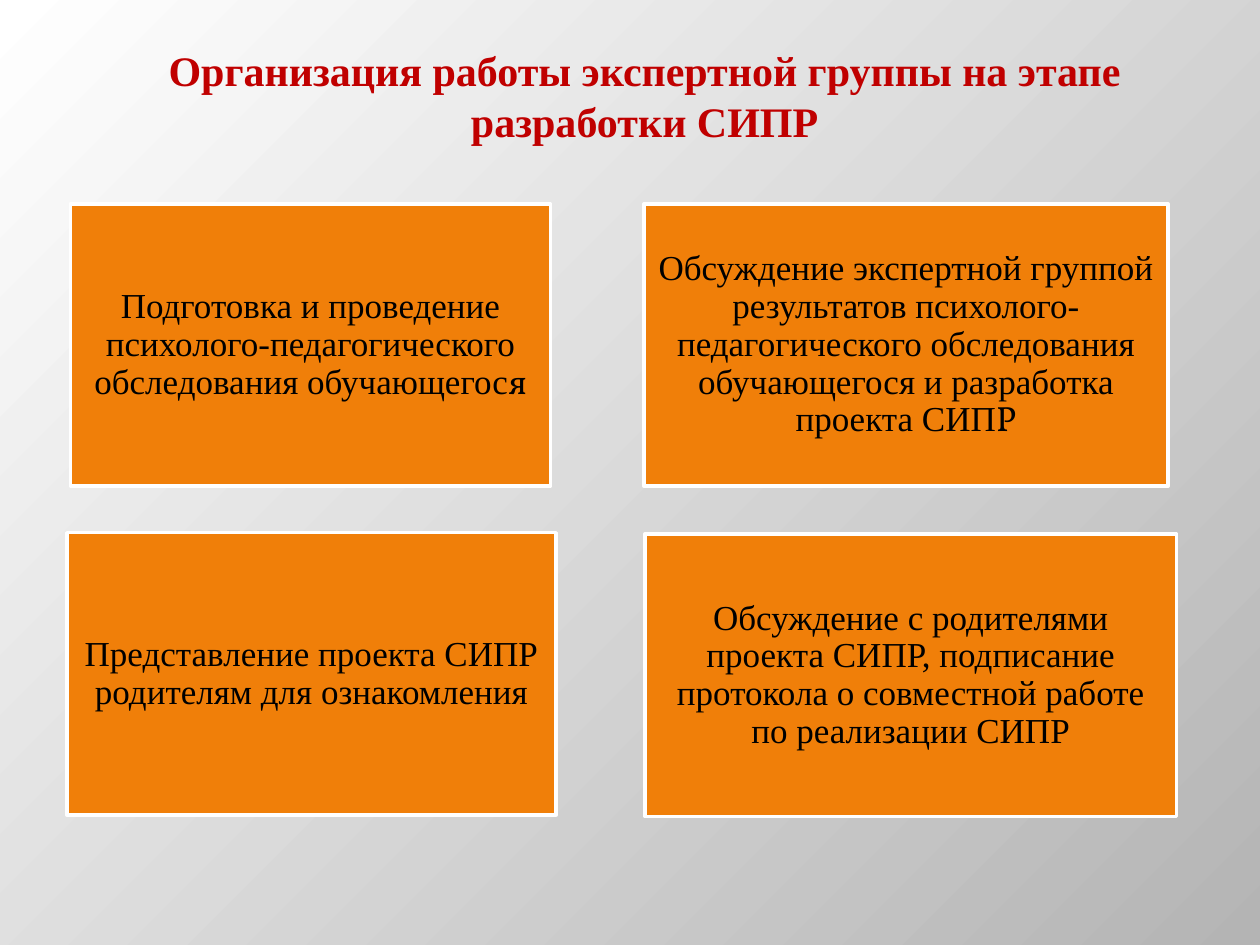
from pptx import Presentation
from pptx.dml.color import RGBColor as RGB
from pptx.enum.shapes import MSO_SHAPE as Shape
from pptx.enum.text import MSO_ANCHOR as Anchor, MSO_AUTO_SIZE as Auto, PP_ALIGN as Align
from pptx.util import Cm, Pt

WHITE = RGB(0xFF, 0xFF, 0xFF)
GRAY = RGB(0xB4, 0xB4, 0xB4)
RED = RGB(0xC0, 0x00, 0x00)
ORANGE = RGB(0xF0, 0x7F, 0x09)
BLACK = RGB(0x00, 0x00, 0x00)

SERIF = "Times New Roman"
TAIL = "Vollkorn"
HIGH = 5.69

# Left, top, width in cm; main text, last letter in the second font
STEPS = [
    (1.42, 4.11, 9.68,
     "Подготовка и проведение психолого-педагогического обследования обучающегос", "я"),
    (12.98, 4.11, 10.57,
     "Обсуждение экспертной группой результатов психолого-педагогического "
     "обследования обучающегося и разработка проекта СИП", "Р"),
    (1.35, 10.74, 9.86,
     "Представление проекта СИПР родителям для ознакомления", ""),
    (13.0, 10.77, 10.72,
     "Обсуждение с родителями проекта СИПР, подписание протокола "
     "о совместной работе по реализации СИПР", ""),
]


def write(para, text, font=SERIF, size=20, color=BLACK, bold=False):
    para.alignment = Align.CENTER
    run = para.add_run()
    run.text = text
    run.font.name = font
    run.font.size = Pt(size)
    run.font.bold = bold
    run.font.color.rgb = color


class Deck:
    def __init__(self):
        self.prs = Presentation()
        self.prs.slide_width, self.prs.slide_height = Cm(25.4), Cm(19.05)
        self.slide = self.prs.slides.add_slide(self.prs.slide_layouts[5])

    def back(self, start, end):
        fill = self.slide.background.fill
        fill.gradient()
        fill.gradient_angle = 315
        for stop, color in zip(fill.gradient_stops, (start, end)):
            stop.color.rgb = color

    def title(self, text, left, top, width, height):
        head = self.slide.shapes.title
        head.left, head.top = Cm(left), Cm(top)
        head.width, head.height = Cm(width), Cm(height)
        frame = head.text_frame
        frame.auto_size = Auto.NONE
        frame.vertical_anchor = Anchor.MIDDLE
        write(frame.paragraphs[0], text, size=24, color=RED, bold=True)

    def box(self, left, top, width, text, tail):
        box = self.slide.shapes.add_shape(
            Shape.RECTANGLE, Cm(left), Cm(top), Cm(width), Cm(HIGH))
        box.shadow.inherit = False
        box.fill.solid()
        box.fill.fore_color.rgb = ORANGE
        box.line.color.rgb = WHITE
        box.line.width = Pt(2)
        frame = box.text_frame
        frame.word_wrap = True
        frame.vertical_anchor = Anchor.MIDDLE
        frame.margin_left = frame.margin_right = Cm(0.2)
        frame.margin_top = frame.margin_bottom = Cm(0.2)
        para = frame.paragraphs[0]
        para.line_spacing = 0.9
        write(para, text)
        if tail:
            write(para, tail, font=TAIL)


def main():
    deck = Deck()
    # Background and title
    deck.back(WHITE, GRAY)
    deck.title("Организация работы экспертной группы на этапе разработки СИПР",
               2.49, 1.12, 21.01, 1.6)
    # Four work steps
    for step in STEPS:
        deck.box(*step)
    deck.prs.save("out.pptx")


if __name__ == "__main__":
    main()
